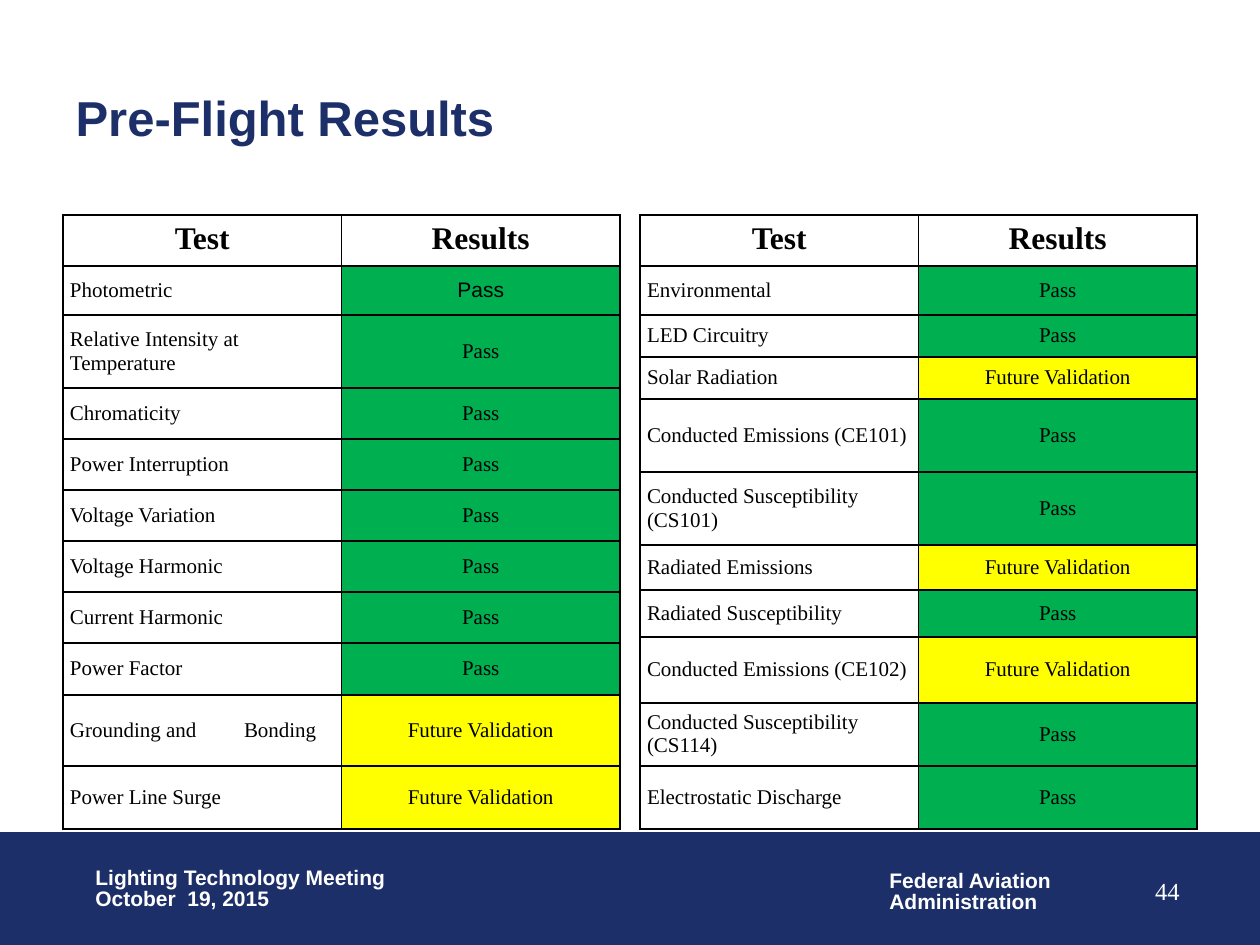
from lxml.etree import SubElement
from pptx import Presentation
from pptx.dml.color import RGBColor
from pptx.enum.shapes import MSO_SHAPE
from pptx.enum.text import MSO_ANCHOR, PP_ALIGN
from pptx.oxml.ns import qn
from pptx.util import Pt

PX = 914400 / 126
COLORS = {"navy": "1D2F68", "white": "FFFFFF", "black": "000000",
          "Pass": "00B050", "Future Validation": "FFFF00"}
SERIF, SANS = "Times New Roman", "Arial"

# Each row: test, result, height
LEFT_ROWS = [
    ("Test", "Results", 51),
    ("Photometric", "Pass", 49),
    ("Relative Intensity at Temperature", "Pass", 73),
    ("Chromaticity", "Pass", 51),
    ("Power Interruption", "Pass", 51),
    ("Voltage Variation", "Pass", 51),
    ("Voltage Harmonic", "Pass", 51),
    ("Current Harmonic", "Pass", 51),
    ("Power Factor", "Pass", 52),
    ("Grounding and\tBonding", "Future Validation", 71),
    ("Power Line Surge", "Future Validation", 63),
]
RIGHT_ROWS = [
    ("Test", "Results", 51),
    ("Environmental", "Pass", 49),
    ("LED Circuitry", "Pass", 42),
    ("Solar Radiation", "Future Validation", 42),
    ("Conducted Emissions (CE101)", "Pass", 73),
    ("Conducted Susceptibility (CS101)", "Pass", 73),
    ("Radiated Emissions", "Future Validation", 45),
    ("Radiated Susceptibility", "Pass", 47),
    ("Conducted Emissions (CE102)", "Future Validation", 66),
    ("Conducted Susceptibility (CS114)", "Pass", 63),
    ("Electrostatic Discharge", "Pass", 63),
]


def px(n):
    return round(n * PX)


def rgb(name):
    return RGBColor.from_string(COLORS[name])


def write(p, text, color, align=PP_ALIGN.LEFT, **fmt):
    p.alignment = align
    r = p.add_run()
    r.text = text
    r.font.color.rgb = rgb(color)
    for name, value in fmt.items():
        setattr(r.font, name, value)


def add_text(s, box, lines, align=PP_ALIGN.LEFT, spacing=1.0, **fmt):
    tf = s.shapes.add_textbox(*map(px, box)).text_frame
    tf.word_wrap = True
    for i, line in enumerate(lines):
        p = tf.add_paragraph() if i else tf.paragraphs[0]
        p.line_spacing = spacing
        write(p, line, "white", align, **fmt)


def add_border(cell, bottom):
    tcPr = cell._tc.get_or_add_tcPr()
    for i, side in enumerate(("lnL", "lnR", "lnT", "lnB")):
        width = bottom if side == "lnB" else 1
        ln = SubElement(tcPr, qn(f"a:{side}"), w=str(Pt(width)))
        fill = SubElement(ln, qn("a:solidFill"))
        SubElement(fill, qn("a:srgbClr"), val=COLORS["black"])
        tcPr.remove(ln)
        tcPr.insert(i, ln)


def add_tab(p, pos):
    tabs = SubElement(p._p.get_or_add_pPr(), qn("a:tabLst"))
    SubElement(tabs, qn("a:tab"), pos=str(px(pos)), algn="l")


def fill_cell(cell, text, header, result):
    side = px(13 if header else 7)
    margins = {"margin_left": side, "margin_right": side,
               "margin_top": px(6), "margin_bottom": px(6)}
    for name, value in margins.items():
        setattr(cell, name, value)
    cell.vertical_anchor = MSO_ANCHOR.TOP if header else MSO_ANCHOR.MIDDLE
    if text in COLORS:
        cell.fill.solid()
        cell.fill.fore_color.rgb = rgb(text)
    else:
        cell.fill.background()
    add_border(cell, 1.5 if header else 1)
    p = cell.text_frame.paragraphs[0]
    if "\t" in text:
        add_tab(p, 174)
    align = PP_ALIGN.CENTER if header or result else PP_ALIGN.LEFT
    write(p, text, "black", align, name=SERIF,
          size=Pt(18 if header else 12), bold=header)


def add_results(s, x, y, w, rows):
    height = sum(row[2] for row in rows)
    frame = s.shapes.add_table(len(rows), 2, px(x), px(y), px(w), px(height))
    table = frame.table
    table.first_row = table.horz_banding = False
    for col in table.columns:
        col.width = px(w / 2)
    for i, (test, result, h) in enumerate(rows):
        table.rows[i].height = px(h)
        for j, text in enumerate((test, result)):
            fill_cell(table.cell(i, j), text, header=i == 0, result=j == 1)
    return table


def add_title(s, x, y, w, h):
    title = s.shapes.title
    title.left, title.top, title.width, title.height = map(px, (x, y, w, h))
    tf = title.text_frame
    tf.vertical_anchor = MSO_ANCHOR.MIDDLE
    write(tf.paragraphs[0], "Pre-Flight Results", "navy",
          name=SANS, size=Pt(28), bold=True)


def add_footer(s, x, y, w, h):
    band = s.shapes.add_shape(MSO_SHAPE.RECTANGLE, *map(px, (x, y, w, h)))
    band.shadow.inherit = False
    band.fill.solid()
    band.fill.fore_color.rgb = band.line.color.rgb = rgb("navy")
    band.line.width = Pt(0.75)
    label = {"spacing": 0.85, "name": SANS, "size": Pt(12), "bold": True}
    add_text(s, (x + 83, y + 29, 319, 55),
             ["Lighting Technology Meeting", "October  19, 2015"], **label)
    add_text(s, (x + 877, y + 32, 189, 55),
             ["Federal Aviation", "Administration"], **label)
    add_text(s, (x + 930, y + 37, 262, 63), ["44"], PP_ALIGN.RIGHT,
             name=SERIF, size=Pt(14))


def main():
    prs = Presentation()
    prs.slide_width, prs.slide_height = px(1260), px(945)
    s = prs.slides.add_slide(prs.slide_layouts[5])
    add_footer(s, 0, 833, 1260, 112)
    add_title(s, 63, 38, 1134, 158)
    left = add_results(s, 63, 215, 557, LEFT_ROWS)
    add_results(s, 640, 215, 557, RIGHT_ROWS)
    # The first result is set in the sans font
    left.cell(1, 1).text_frame.paragraphs[0].runs[0].font.name = SANS
    prs.save("out.pptx")


if __name__ == "__main__":
    main()
